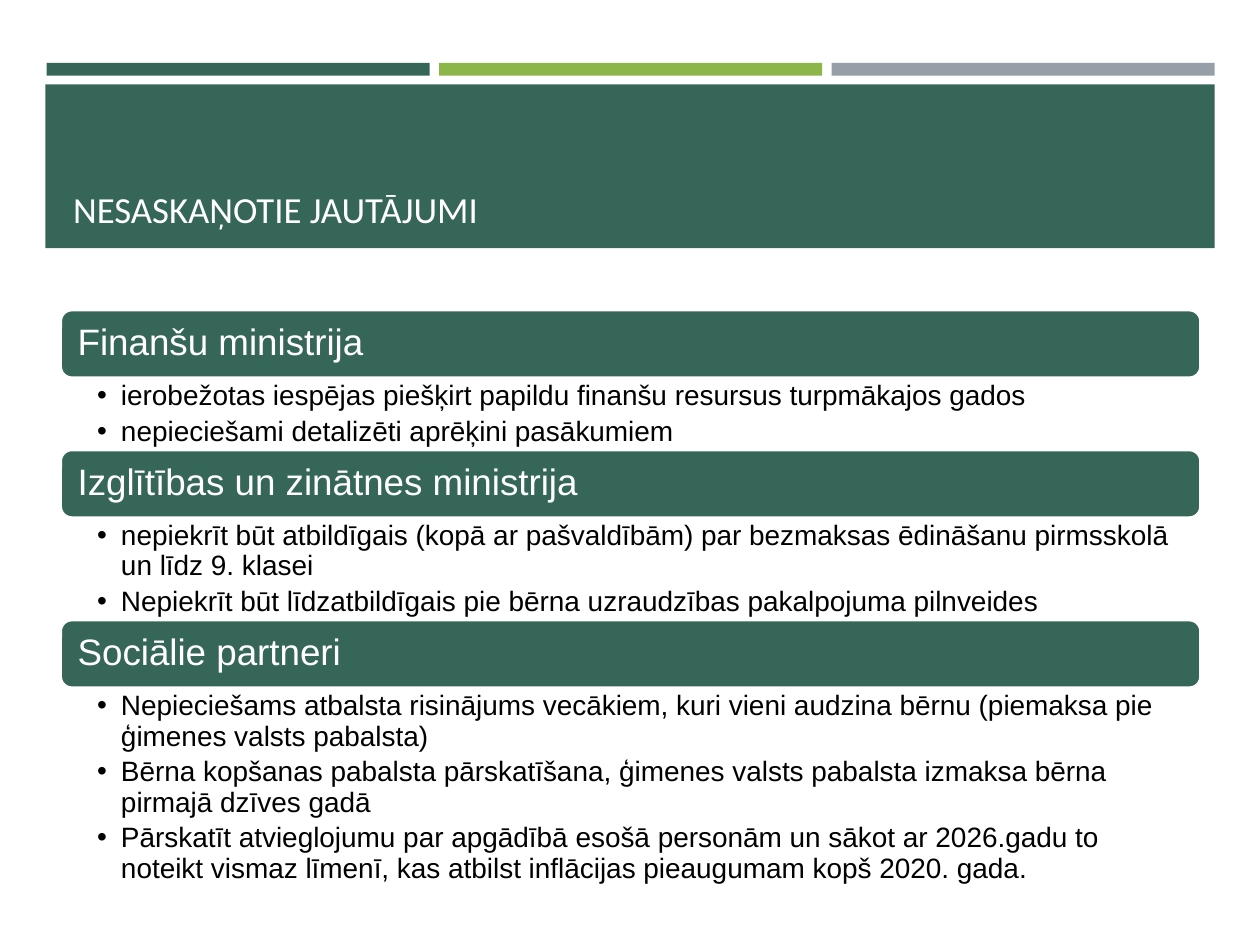
"""Build the slide of open issues, grouped by the party that raises them."""
from dataclasses import dataclass

from lxml import etree
from pptx import Presentation
from pptx import util as u
from pptx.dml.color import RGBColor
from pptx.enum import shapes, text
from pptx.oxml.ns import qn

GREEN = RGBColor(0x36, 0x66, 0x58)
LIME = RGBColor(0x8C, 0xB6, 0x4A)
GREY = RGBColor(0x96, 0x9F, 0xA7)
WHITE = RGBColor(0xFF, 0xFF, 0xFF)
BLACK = RGBColor(0, 0, 0)

WIDTH, HEIGHT = u.Inches(10), u.Inches(7.5)
COLUMNS, ROWS = 100, 75
LEFT, SPAN = 4.8, 90.5
HEAD_ROWS = 5.4
FIRST_ROW = 24.6
COMPARISON_LAYOUT = 4
INDENT = u.Inches(0.19)


@dataclass(frozen=True)
class Area:
    """A rectangle counted in grid columns and rows."""

    column: float
    row: float
    columns: float
    rows: float

    def lengths(self) -> tuple[int, int, int, int]:
        """Return left, top, width and height in slide units."""
        across, down = WIDTH / COLUMNS, HEIGHT / ROWS
        return (round(self.column * across), round(self.row * down),
                round(self.columns * across), round(self.rows * down))


@dataclass(frozen=True)
class Section:
    """A party, its points and the rows that the points take."""

    party: str
    points: tuple[str, ...]
    rows: float


SECTIONS = (
    Section("Finanšu ministrija", (
        "ierobežotas iespējas piešķirt papildu finanšu resursus turpmākajos gados",
        "nepieciešami detalizēti aprēķini pasākumiem",
    ), 5.7),
    Section("Izglītības un zinātnes ministrija", (
        "nepiekrīt būt atbildīgais (kopā ar pašvaldībām) par bezmaksas ēdināšanu "
        "pirmsskolā un līdz 9. klasei",
        "Nepiekrīt būt līdzatbildīgais pie bērna uzraudzības pakalpojuma pilnveides",
    ), 8.1),
    Section("Sociālie partneri", (
        "Nepieciešams atbalsta risinājums vecākiem, kuri vieni audzina bērnu "
        "(piemaksa pie ģimenes valsts pabalsta)",
        "Bērna kopšanas pabalsta pārskatīšana, ģimenes valsts pabalsta izmaksa "
        "bērna pirmajā dzīves gadā",
        "Pārskatīt atvieglojumu par apgādībā esošā personām un sākot ar 2026.gadu "
        "to noteikt vismaz līmenī, kas atbilst inflācijas pieaugumam kopš 2020. gada.",
    ), 15.7),
)


def write(box, lines: tuple[str, ...], *, size: float, color: RGBColor,
          font: str = "Arial", anchor=text.MSO_ANCHOR.MIDDLE,
          insets: tuple[float, float, float, float] = (0.1, 0.05, 0.1, 0.05),
          spacing: float = 0.9, after: float = 0, bullet: str = "") -> None:
    """Fill a shape with formatted paragraphs; insets run left, top, right, bottom."""
    frame = box.text_frame
    frame.word_wrap = True
    frame.auto_size = text.MSO_AUTO_SIZE.NONE
    frame.vertical_anchor = anchor
    (frame.margin_left, frame.margin_top,
     frame.margin_right, frame.margin_bottom) = map(u.Inches, insets)
    for number, line in enumerate(lines):
        para = frame.add_paragraph() if number else frame.paragraphs[0]
        para.alignment = text.PP_ALIGN.LEFT
        para.line_spacing = spacing
        para.space_before, para.space_after = u.Pt(0), u.Pt(after)
        if bullet:
            para.level = 1
            properties = para._p.get_or_add_pPr()
            properties.set("marL", str(INDENT))
            properties.set("indent", str(-INDENT))
            etree.SubElement(properties, qn("a:buFont")).set("typeface", font)
            etree.SubElement(properties, qn("a:buChar")).set("char", bullet)
        span = para.add_run()
        span.text = line
        span.font.name, span.font.size = font, u.Pt(size)
        span.font.bold = False
        span.font.color.rgb = color


def draw_block(page, area: Area, fill: RGBColor,
               kind=shapes.MSO_SHAPE.RECTANGLE, outline: float = 0):
    """Draw a filled shape, with a white outline if one is given."""
    block = page.shapes.add_shape(kind, *area.lengths())
    block.shadow.inherit = False
    block.fill.solid()
    block.fill.fore_color.rgb = fill
    if outline:
        block.line.color.rgb = WHITE
        block.line.width = u.Pt(outline)
    else:
        block.line.fill.background()
    return block


def place(placeholder, area: Area) -> None:
    """Move a placeholder to an area and bring it to the front."""
    (placeholder.left, placeholder.top,
     placeholder.width, placeholder.height) = area.lengths()
    placeholder.element.getparent().append(placeholder.element)


def draw_header(page) -> None:
    """Draw the three bars, the band and the title."""
    for number, color in enumerate((GREEN, LIME, GREY)):
        draw_block(page, Area(3.7 + 31.15 * number, 5, 30.4, 1), color)
    draw_block(page, Area(3.6, 6.7, 92.8, 13), GREEN)
    title = page.shapes.title
    place(title, Area(LEFT, 7.7, SPAN, 11.1))
    write(title, ("NESASKAŅOTIE JAUTĀJUMI",), size=21, color=WHITE,
          font="Calibri", anchor=text.MSO_ANCHOR.BOTTOM, spacing=1.0)


def draw_section(page, section: Section, body, row: float) -> float:
    """Draw a section from a row downwards and return the next free row."""
    head = draw_block(page, Area(LEFT, row, SPAN, HEAD_ROWS), GREEN,
                      shapes.MSO_SHAPE.ROUNDED_RECTANGLE, outline=1.75)
    write(head, (section.party,), size=21, color=WHITE,
          insets=(0.11, 0.09, 0.11, 0.09))
    row += HEAD_ROWS
    place(body, Area(LEFT, row, SPAN, section.rows))
    write(body, section.points, size=16, color=BLACK, bullet="•", after=3.2,
          anchor=text.MSO_ANCHOR.TOP, insets=(0.29, 0.03, 0.16, 0.03))
    return row + section.rows


def main() -> None:
    """Build and save the deck."""
    deck = Presentation()
    deck.slide_width, deck.slide_height = WIDTH, HEIGHT
    page = deck.slides.add_slide(deck.slide_layouts[COMPARISON_LAYOUT])
    bodies = [holder for holder in page.placeholders
              if holder.placeholder_format.idx in (1, 2, 3, 4)]
    spare = bodies.pop().element
    spare.getparent().remove(spare)
    draw_header(page)
    row = FIRST_ROW
    for section, body in zip(SECTIONS, bodies):
        row = draw_section(page, section, body, row)
    deck.save("out.pptx")


if __name__ == "__main__":
    main()
